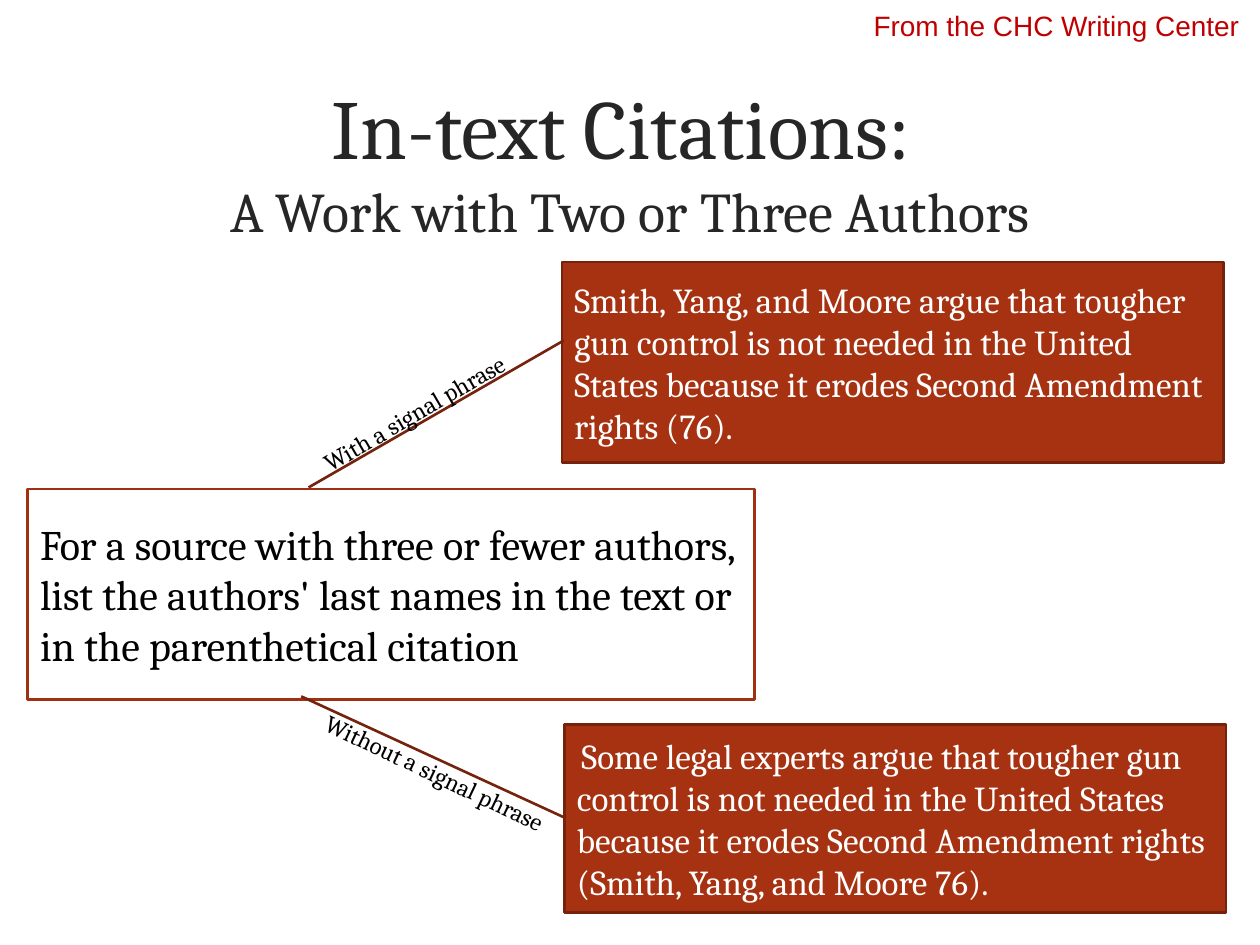
"""Build the slide on in-text citations of a work with two or three authors."""
from pptx import Presentation
from pptx.dml.color import RGBColor
from pptx.enum.shapes import MSO_SHAPE as Shape
from pptx.enum.text import MSO_ANCHOR as Anchor, MSO_AUTO_SIZE as AutoSize, PP_ALIGN as Align
from pptx.util import Inches, Pt


def color(hex_string):
    return RGBColor.from_string(hex_string)


def write(shape, text, size, hex_color="000000", font="Cambria", align=Align.LEFT,
          anchor=Anchor.MIDDLE, auto_size=AutoSize.NONE):
    """Write text in a shape; text is a string or a list of (text, size) runs."""
    frame = shape.text_frame
    frame.word_wrap = True
    frame.auto_size = auto_size
    frame.vertical_anchor = anchor
    paragraph = frame.paragraphs[0]
    paragraph.alignment = align
    for part, points in [(text, size)] if isinstance(text, str) else text:
        if part == "\n":
            paragraph.add_line_break()
            continue
        run = paragraph.add_run()
        run.text = part
        run.font.name = font
        run.font.size = Pt(points)
        run.font.color.rgb = color(hex_color)


presentation = Presentation()
presentation.slide_width, presentation.slide_height = Inches(10), Inches(7.5)
slide = presentation.slides.add_slide(presentation.slide_layouts[5])
shapes = slide.shapes

title = shapes.title
title.left, title.top, title.width, title.height = map(Inches, (0.6, 0.48, 8.8, 1.58))
write(title, [("In-text Citations: ", 48), ("\n", 48), ("A Work with Two or Three Authors", 32)],
      48, "262626", align=Align.CENTER)

rule = "For a source with three or fewer authors, list the authors' last names in the text or in the parenthetical citation"
with_signal = "Smith, Yang, and Moore argue that tougher gun control is not needed in the United States because it erodes Second Amendment rights (76)."
without_signal = "Some legal experts argue that tougher gun control is not needed in the United States because it erodes Second Amendment rights (Smith, Yang, and Moore 76)."

boxes = [
    (Shape.RECTANGLE, (0.22, 3.88, 5.77, 1.67), (), "FFFFFF", "9F3011", rule, 24, "000000"),
    (Shape.LINE_CALLOUT_1, (4.46, 2.08, 5.25, 1.59), (0.391, 0.003, 1.125, -0.383),
     "A63212", "75230C", with_signal, 20, "FFFFFF"),
    (Shape.LINE_CALLOUT_1, (4.48, 5.75, 5.25, 1.49), (0.499, 0.002, -0.15, -0.398),
     "A63212", "75230C", [(" ", 12), (without_signal, 20)], 20, "FFFFFF"),
]
for kind, place, adjustments, fill, line, text, size, text_color in boxes:
    box = shapes.add_shape(kind, *map(Inches, place))
    box.shadow.inherit = False
    for index, value in enumerate(adjustments):
        box.adjustments[index] = value
    box.fill.solid()
    box.fill.fore_color.rgb = color(fill)
    box.line.color.rgb = color(line)
    box.line.width = Pt(1.5)
    write(box, text, size, text_color)

labels = [
    ("With a signal phrase", (2.33, 2.94, 2.5, 0.34), 329.8),
    ("Without a signal phrase", (2.39, 6.03, 2.39, 0.34), 25.5),
]
for text, place, rotation in labels:
    label = shapes.add_textbox(*map(Inches, place))
    label.rotation = rotation
    write(label, text, 14, anchor=Anchor.TOP, auto_size=AutoSize.SHAPE_TO_FIT_TEXT)

credit = shapes.add_textbox(*map(Inches, (6.8, 0, 3.17, 0.4)))
write(credit, "From the CHC Writing Center", 16, "C00000", font="Arial", align=Align.CENTER)

presentation.save("out.pptx")
